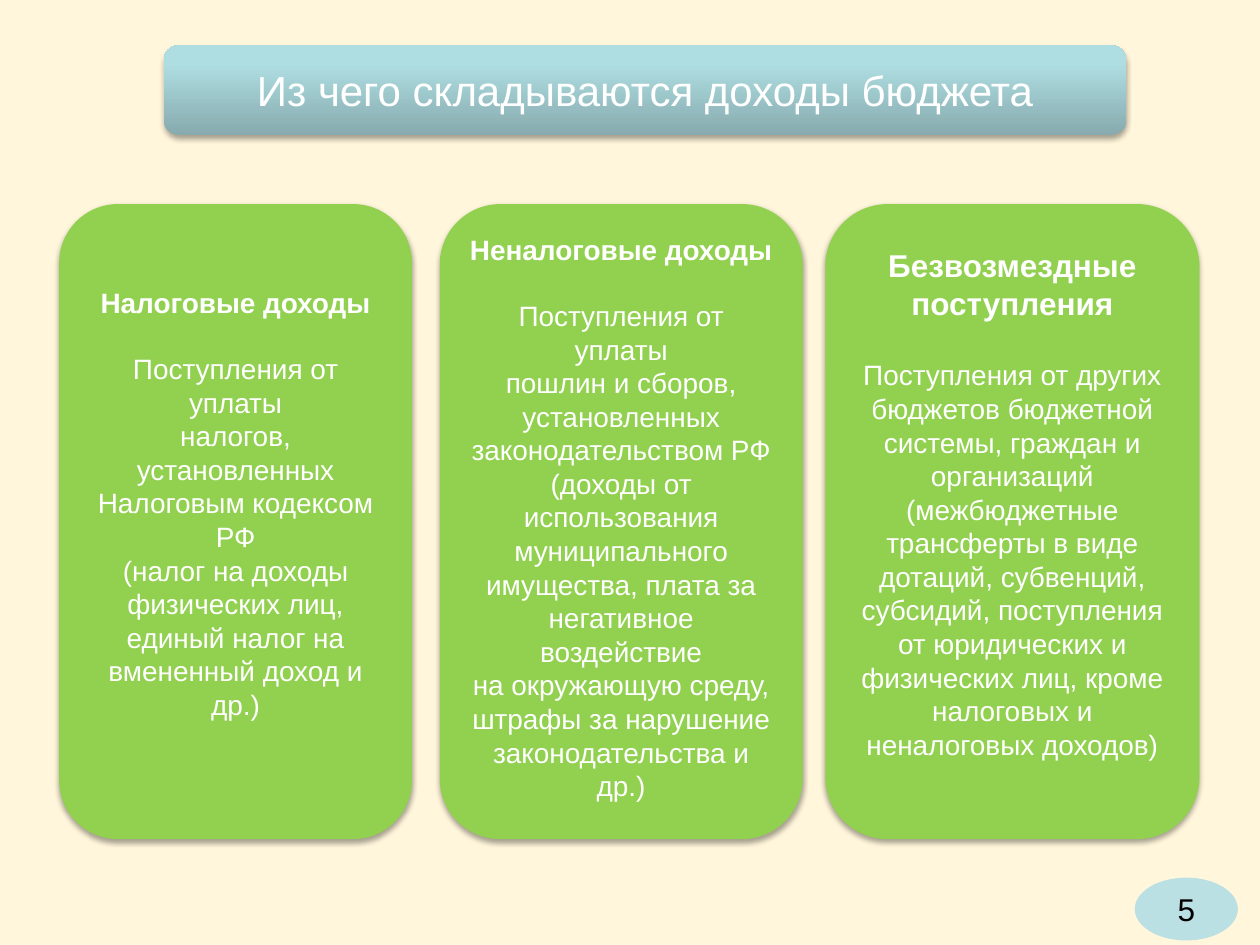
from lxml.etree import SubElement
from pptx import Presentation
from pptx.dml.color import RGBColor
from pptx.enum.shapes import MSO_SHAPE
from pptx.enum.text import MSO_ANCHOR, PP_ALIGN
from pptx.oxml.ns import qn
from pptx.util import Inches, Pt

COLOURS = {
    "background": "FFF6DB",
    "card": "92D050",
    "badge": "BBE0E3",
    "light": "FFFFFF",
    "dark": "000000",
}
BANNER_STOPS = [(0, "87ABAE"), (80, "AFDEE2"), (100, "AFE0E4")]
FONT = "Arial"
LINE_HEIGHT = 1.15  # of the font size, for one line of Arial

# left, width, heading size, heading, top inset, size of the space below, body lines
CARDS = [
    (0.47, 2.8, 16, "Налоговые доходы", 0.05, 18, [
        "Поступления от уплаты",
        "налогов, установленных",
        "Налоговым кодексом РФ",
        "(налог на доходы",
        "физических лиц,",
        "единый налог на",
        "вмененный доход и др.)",
    ]),
    (3.49, 2.88, 16, "Неналоговые доходы", 0.24, 16, [
        "Поступления от уплаты",
        "пошлин и сборов,",
        "установленных",
        "законодательством РФ",
        "(доходы от",
        "использования",
        "муниципального",
        "имущества, плата за",
        "негативное воздействие",
        "на окружающую среду,",
        "штрафы за нарушение",
        "законодательства и др.)",
    ]),
    (6.55, 2.97, 18, "Безвозмездные поступления", 0.05, 18, [
        "Поступления от других",
        "бюджетов бюджетной",
        "системы, граждан и",
        "организаций",
        "(межбюджетные",
        "трансферты в виде",
        "дотаций, субвенций,",
        "субсидий, поступления",
        "от юридических и физических лиц, кроме налоговых и неналоговых доходов)",
    ]),
]


class SlideBuilder:
    def __init__(self, deck):
        self.page = deck.slides.add_slide(deck.slide_layouts[6])
        background = self.page.background.fill
        background.solid()
        background.fore_color.rgb = self.colour("background")

    def colour(self, name):
        return RGBColor.from_string(COLOURS[name])

    def shape(self, kind, left, top, width, height, fill=None):
        box = self.page.shapes.add_shape(
            kind, Inches(left), Inches(top), Inches(width), Inches(height))
        box.shadow.inherit = False
        box.line.fill.background()
        if fill:
            box.fill.solid()
            box.fill.fore_color.rgb = self.colour(fill)
        return box

    def drop_shadow(self, box):
        effects = box.fill._xPr.find(qn("a:effectLst"))
        shadow = SubElement(effects, qn("a:outerShdw"), blurRad=str(Pt(3.1)),
                            dist=str(Pt(1.8)), dir="5400000", rotWithShape="0")
        black = SubElement(shadow, qn("a:srgbClr"), val=COLOURS["dark"])
        SubElement(black, qn("a:alpha"), val="35000")

    def gradient(self, box, stops):
        """Fill the box from bottom to top with (percent, colour) stops."""
        box.fill.gradient()
        box.fill.gradient_angle = 90
        stop_list = box.fill._xPr.find(".//" + qn("a:gsLst"))
        for old_stop in list(stop_list):
            stop_list.remove(old_stop)
        for percent, value in stops:
            stop = SubElement(stop_list, qn("a:gs"), pos=str(percent * 1000))
            SubElement(stop, qn("a:srgbClr"), val=value)

    def text(self, box, lines, size, colour="light"):
        frame = box.text_frame
        frame.word_wrap = True
        frame.vertical_anchor = MSO_ANCHOR.MIDDLE
        frame.text = "\n".join(lines)
        for paragraph in frame.paragraphs:
            paragraph.alignment = PP_ALIGN.CENTER
            for span in paragraph.runs:
                span.font.name = FONT
                span.font.size = Pt(size)
                span.font.color.rgb = self.colour(colour)
        return frame

    def banner(self, title):
        box = self.shape(MSO_SHAPE.ROUNDED_RECTANGLE, 1.3, 0.36, 7.64, 0.71)
        self.gradient(box, BANNER_STOPS)
        self.drop_shadow(box)
        self.text(box, [title], 24)

    def card(self, left, width, heading_size, heading, top_inset, space_size, body):
        box = self.shape(MSO_SHAPE.ROUNDED_RECTANGLE, left, 1.62, width, 5.04, "card")
        self.drop_shadow(box)
        frame = self.text(box, [heading, *body], 16)
        frame.margin_top = Inches(top_inset)
        frame.margin_bottom = Inches(0.05) + Pt(space_size * LINE_HEIGHT)
        first, *others = frame.paragraphs
        first.space_after = Pt(round(heading_size * LINE_HEIGHT, 1))
        for span in first.runs:
            span.font.size = Pt(heading_size)
            span.font.bold = True
        for paragraph in others:
            paragraph.line_spacing = Pt(19.2)

    def page_number(self, number):
        box = self.shape(MSO_SHAPE.OVAL, 9.02, 6.98, 0.79, 0.47, "badge")
        box.line.color.rgb = self.colour("badge")
        box.line.width = Pt(2)
        self.text(box, [number], 18, "dark")


def main():
    deck = Presentation()
    deck.slide_width, deck.slide_height = Inches(10), Inches(7.5)
    builder = SlideBuilder(deck)
    builder.banner("Из чего складываются доходы бюджета")
    for card in CARDS:
        builder.card(*card)
    builder.page_number("5")
    deck.save("out.pptx")


if __name__ == "__main__":
    main()
